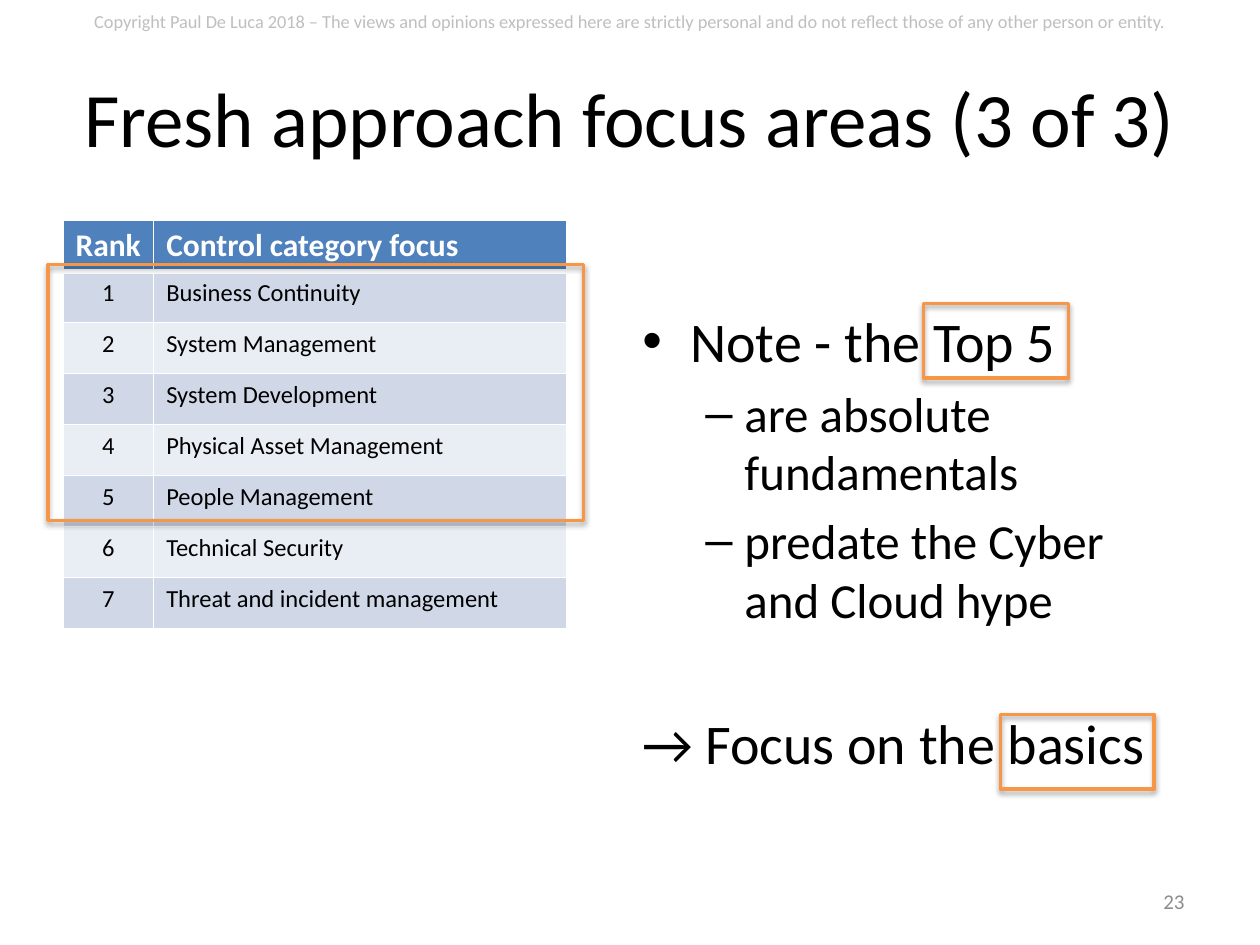
import pptx
import pptx.util
import pptx.dml.color
import pptx.enum.shapes
import pptx.enum.text
import pptx.oxml
import pptx.oxml.ns
from lxml import etree

Inches, Pt = pptx.util.Inches, pptx.util.Pt
ALIGN = pptx.enum.text.PP_ALIGN
MIDDLE = pptx.enum.text.MSO_ANCHOR.MIDDLE
qn = pptx.oxml.ns.qn
NS = pptx.oxml.ns.nsdecls("a")

NOTICE = ("Copyright Paul De Luca 2018 – The views and opinions expressed here are "
          "strictly personal and do not reflect those of any other person or entity.")
TITLE = "Fresh approach focus areas (3 of 3)"
PAGE = "23"
HEADS = ("Rank", "Control category focus")
AREAS = ["Business Continuity", "System Management", "System Development",
         "Physical Asset Management", "People Management", "Technical Security",
         "Threat and incident management"]
COLS = (0.72, 3.28)
ROW = 0.405
# text, size, space before, left margin, indent, bullet
NOTES = [
    ("Note - the Top 5", 32, 0, 0.38, -0.38, "•"),
    ("are absolute fundamentals", 28, 5.6, 0.81, -0.31, "–"),
    ("predate the Cyber and Cloud hype", 28, 5.6, 0.81, -0.31, "–"),
    ("→\tFocus on the basics", 32, 46, 0, 0, None),
]
FRAMES = [(0.38, 2.1, 4.25, 2.03), (7.33, 2.41, 1.15, 0.59), (7.94, 5.67, 1.22, 0.59)]


def rgb(code):
    return pptx.dml.color.RGBColor.from_string(code)


def style(para, size, color="000000", align=ALIGN.LEFT, bold=False):
    para.alignment = align
    for run in para.runs:
        font = run.font
        font.name, font.size, font.bold = "Calibri", Pt(size), bold
        font.color.rgb = rgb(color)


def add_box(slide, box):
    frame = slide.shapes.add_textbox(*map(Inches, box)).text_frame
    frame.word_wrap = True
    return frame


def add_line(slide, box, text, size, color, align):
    frame = add_box(slide, box)
    frame.vertical_anchor = MIDDLE
    frame.text = text
    style(frame.paragraphs[0], size, color, align)


def indent(para, left, first, mark):
    """Set the margins and either a bullet or a tab stop."""
    props = para._p.get_or_add_pPr()
    props.set("marL", str(Inches(left)))
    props.set("indent", str(Inches(first)))
    if mark:
        etree.SubElement(props, qn("a:buFont"), typeface="Arial")
        etree.SubElement(props, qn("a:buChar"), char=mark)
    else:
        etree.SubElement(props, qn("a:buNone"))
        tabs = etree.SubElement(props, qn("a:tabLst"))
        etree.SubElement(tabs, qn("a:tab"), pos=str(Inches(0.5)), algn="l")


def add_notes(slide):
    frame = add_box(slide, (5, 2.38, 4.5, 4.32))
    frame.text = "\n".join(note[0] for note in NOTES)
    for para, (_, size, gap, left, first, mark) in zip(frame.paragraphs, NOTES):
        style(para, size)
        para.space_before = Pt(gap)
        indent(para, left, first, mark)


def edge(cell, row):
    """Draw white cell borders, thick between head and body."""
    thick = {0: "lnB", 1: "lnT"}.get(row)
    props = cell._tc.get_or_add_tcPr()
    for side in ("lnL", "lnR", "lnT", "lnB"):
        width = Pt(3 if side == thick else 1)
        props.append(pptx.oxml.parse_xml(
            f'<a:{side} {NS} w="{width}"><a:solidFill><a:srgbClr val="FFFFFF"/>'
            f'</a:solidFill></a:{side}>'))


def add_grid(slide):
    rows = [HEADS] + [(str(n), area) for n, area in enumerate(AREAS, 1)]
    table = slide.shapes.add_table(
        len(rows), len(COLS), Inches(0.5), Inches(1.75),
        Inches(sum(COLS)), Inches(ROW * len(rows))).table
    for col, width in zip(table.columns, COLS):
        col.width = Inches(width)
    for r, texts in enumerate(rows):
        table.rows[r].height = Inches(ROW)
        for c, text in enumerate(texts):
            cell = table.cell(r, c)
            cell.text = text
            para = cell.text_frame.paragraphs[0]
            edge(cell, r)
            cell.fill.solid()
            if r == 0:
                style(para, 18, "FFFFFF", bold=True)
                cell.fill.fore_color.rgb = rgb("4F81BD")
            else:
                style(para, 14, align=ALIGN.LEFT if c else ALIGN.CENTER)
                cell.fill.fore_color.rgb = rgb("D0D8E8" if r % 2 else "E9EDF4")


def add_frame(slide, box):
    shape = slide.shapes.add_shape(
        pptx.enum.shapes.MSO_SHAPE.RECTANGLE, *map(Inches, box))
    shape.fill.background()
    shape.line.color.rgb = rgb("F79646")
    shape.line.width = Pt(2)
    shape.shadow.inherit = False
    shape._element.spPr.find(qn("a:effectLst")).append(pptx.oxml.parse_xml(
        f'<a:outerShdw {NS} blurRad="{Pt(3.1)}" dist="{Pt(1.8)}" dir="5400000" '
        'rotWithShape="0"><a:srgbClr val="000000"><a:alpha val="35000"/>'
        '</a:srgbClr></a:outerShdw>'))


def main():
    deck = pptx.Presentation()
    deck.slide_width, deck.slide_height = Inches(10), Inches(7.5)
    slide = deck.slides.add_slide(deck.slide_layouts[5])
    title = slide.shapes.title
    title.left, title.top, title.width, title.height = map(Inches, (0.5, 0.3, 9, 1.25))
    title.text_frame.text = TITLE
    title.text_frame.vertical_anchor = MIDDLE
    style(title.text_frame.paragraphs[0], 44, align=ALIGN.CENTER)
    add_line(slide, (0.5, 0.03, 9, 0.28), NOTICE, 10.5, "BFBFBF", ALIGN.CENTER)
    add_notes(slide)
    add_line(slide, (7.17, 6.95, 2.33, 0.4), PAGE, 12, "8C8C8C", ALIGN.RIGHT)
    add_grid(slide)
    for box in FRAMES:
        add_frame(slide, box)
    deck.save("out.pptx")


if __name__ == "__main__":
    main()
